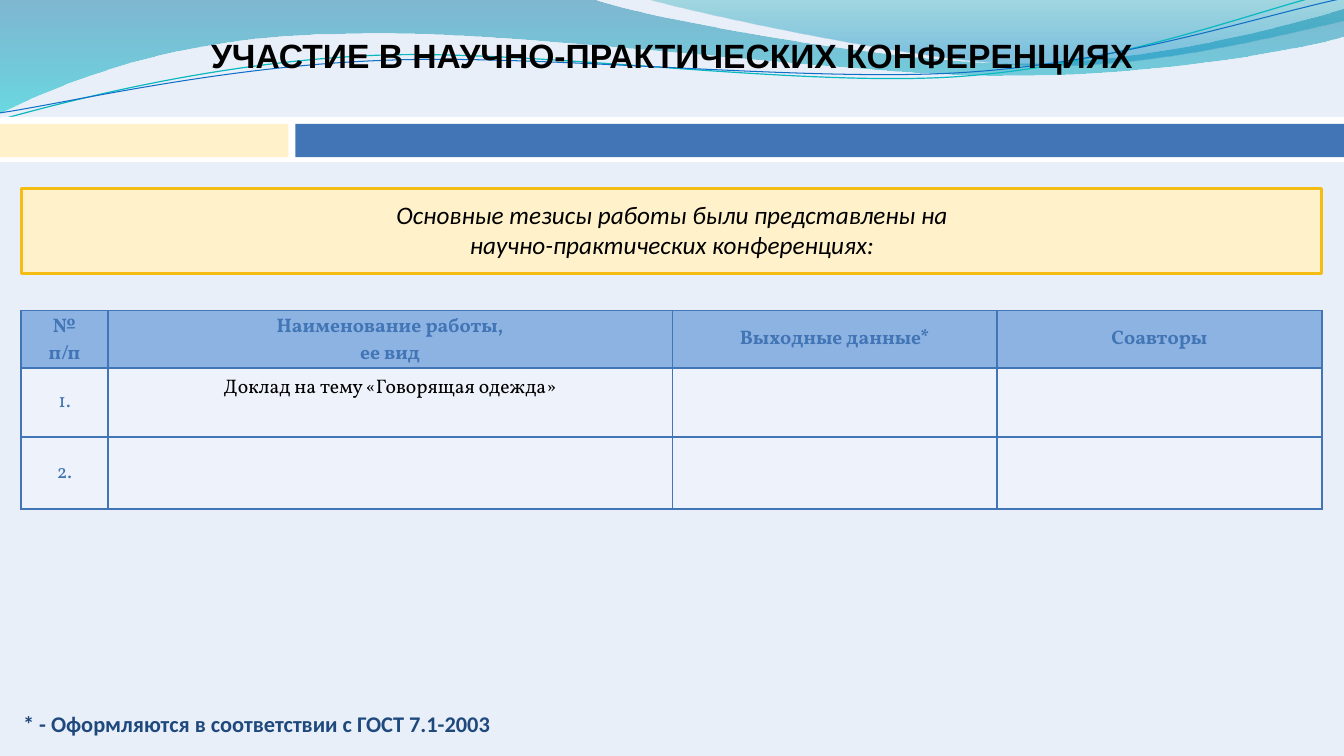
from lxml import etree
from pptx import Presentation
from pptx.dml.color import RGBColor
from pptx.enum.shapes import MSO_SHAPE
from pptx.enum.text import MSO_ANCHOR, PP_ALIGN
from pptx.oxml.ns import qn
from pptx.util import Inches, Pt

RECT = MSO_SHAPE.RECTANGLE
TOP, MIDDLE = MSO_ANCHOR.TOP, MSO_ANCHOR.MIDDLE
LEFT, CENTER = PP_ALIGN.LEFT, PP_ALIGN.CENTER
WIDE, HIGH = 13.33, 7.5
EDGE, INNER = 0.21, 12.9

COLORS = {
    "back": "E8EFF9", "white": "FFFFFF", "black": "000000",
    "blue": "4175B5", "cream": "FFF2CB", "gold": "F5BD14",
    "head": "8DB3E2", "cell": "EEF2FA", "navy": "1F497D",
    "sea": "0074A1", "aqua": "00C6CF", "teal": "00A1A9",
    "sky": "008BBF", "mint": "0AB8BF", "azure": "0F6FC6",
}

# A pair is a straight step; six numbers are a Bézier step.
WAVES = [
    ([(0, -0.01), (5.87, -0.01),
      (6.34, 0.17, 8.85, 0.63, 10.11, 0.63),
      (11.38, 0.63, 12.78, 0.26, 13.33, 0.09), (13.35, 0.36),
      (13.11, 0.44, 11.6, 0.76, 9.94, 0.75),
      (8.29, 0.75, 5.09, 0.28, 3.43, 0.34),
      (1.72, 0.35, 0.61, 0.83, -0.01, 1.13)],
     [(0, "sea", 45), (1, "aqua", 55)]),
    ([(6.39, -0.01),
      (6.79, 0.11, 9.09, 0.62, 10.25, 0.65),
      (11.41, 0.69, 12.82, 0.32, 13.33, 0.21), (13.33, 0)],
     [(0, "teal", 30), (0.8, "sky", 45)]),
]
LINES = [
    ([(-0.01, 1.19), (0.64, 1.01, 2.11, 0.62, 3.69, 0.55),
      (5.27, 0.48, 7.9, 0.87, 9.5, 0.76),
      (11.1, 0.65, 12.52, 0.08, 13.31, -0.1)], "mint", 0.85),
    ([(0, 1.12), (0.63, 1.03, 2.18, 0.66, 3.78, 0.6),
      (5.37, 0.53, 7.96, 0.82, 9.55, 0.72),
      (11.15, 0.62, 12.55, 0.14, 13.34, -0.02)], "azure", 0.75),
]
COLS = [0.86, 5.6, 3.22, 3.22]
ROWS = [0.57, 0.69, 0.71]
CELLS = [
    ["№\nп/п", "Наименование работы,\nее вид", "Выходные данные*", "Соавторы"],
    ["1.", "Доклад на тему «Говорящая одежда»", "", ""],
    ["2.", "", "", ""],
]


def rgb(name):
    return RGBColor.from_string(COLORS[name])


def outline(slide, steps, close):
    """Join the end points, then bend the Bézier steps."""
    ends = [tuple(map(Inches, step[-2:])) for step in steps]
    pen = slide.shapes.build_freeform(*ends[0])
    pen.add_line_segments(ends[1:], close=close)
    shape = pen.convert_to_shape()
    shape.shadow.inherit = False
    nodes = list(shape.element.iter(qn("a:lnTo")))
    for node, step in zip(nodes, steps[1:]):
        if len(step) == 2:
            continue
        node.tag = qn("a:cubicBezTo")
        for i in (0, 1):
            x, y = map(Inches, step[2 * i:2 * i + 2])
            node.insert(i, etree.Element(
                qn("a:pt"), x=str(x - shape.left), y=str(y - shape.top)))
    return shape


def wave(slide, steps, stops):
    shape = outline(slide, steps, True)
    shape.line.fill.background()
    shape.fill.gradient()
    shape.fill.gradient_angle = 270
    for stop, (place, name, _) in zip(shape.fill.gradient_stops, stops):
        stop.position = place
        stop.color.rgb = rgb(name)
    tints = shape.element.spPr.iter(qn("a:srgbClr"))
    for tint, (_, _, share) in zip(tints, stops):
        etree.SubElement(tint, qn("a:alpha"), val=str(share * 1000))


def strand(slide, steps, name, width):
    shape = outline(slide, steps, False)
    shape.fill.background()
    shape.line.color.rgb = rgb(name)
    shape.line.width = Pt(width)


def bar(slide, box, name, edge=None):
    shape = slide.shapes.add_shape(RECT, *map(Inches, box))
    shape.shadow.inherit = False
    shape.fill.solid()
    shape.fill.fore_color.rgb = rgb(name)
    if edge:
        shape.line.color.rgb = rgb(edge)
        shape.line.width = Pt(2)
    else:
        shape.line.fill.background()


def write(frame, text, face, size, name, align=CENTER, bold=False, slant=False):
    for i, row in enumerate(text.split("\n")):
        para = frame.add_paragraph() if i else frame.paragraphs[0]
        para.text = row
        para.alignment = align
        font = para.font
        font.name, font.size = face, Pt(size)
        font.bold, font.italic = bold, slant
        font.color.rgb = rgb(name)


def label(slide, box, text, *style, wrap=False, **more):
    frame = slide.shapes.add_textbox(*map(Inches, box)).text_frame
    frame.word_wrap = wrap
    write(frame, text, *style, **more)


def border(cell, name, width):
    props = cell._tc.get_or_add_tcPr()
    for i, side in enumerate(("lnL", "lnR", "lnT", "lnB")):
        line = etree.Element(qn("a:" + side), w=str(Pt(width)))
        fill = etree.SubElement(line, qn("a:solidFill"))
        etree.SubElement(fill, qn("a:srgbClr"), val=COLORS[name])
        props.insert(i, line)


def grid(slide, left, top):
    table = slide.shapes.add_table(
        len(ROWS), len(COLS), Inches(left), Inches(top),
        Inches(sum(COLS)), Inches(sum(ROWS))).table
    for col, width in zip(table.columns, COLS):
        col.width = Inches(width)
    for r, (height, texts) in enumerate(zip(ROWS, CELLS)):
        table.rows[r].height = Inches(height)
        head = r == 0
        for c, text in enumerate(texts):
            cell = table.cell(r, c)
            topic = c == 1 and r == 1
            cell.fill.solid()
            cell.fill.fore_color.rgb = rgb("head" if head else "cell")
            cell.vertical_anchor = TOP if topic else MIDDLE
            cell.margin_top = cell.margin_bottom = Inches(0 if head else 0.05)
            if topic:
                cell.margin_top = Inches(0.07)
            elif "\n" in text:
                cell.margin_top = Inches(0.03)
            write(cell.text_frame, text, "Vollkorn", 14,
                  "black" if topic else "blue", bold=head)
            border(cell, "blue", 1.5)


def main():
    deck = Presentation()
    deck.slide_width, deck.slide_height = Inches(WIDE), Inches(HIGH)
    slide = deck.slides.add_slide(deck.slide_layouts[6])
    slide.background.fill.solid()
    slide.background.fill.fore_color.rgb = rgb("back")
    for item in WAVES:
        wave(slide, *item)
    for item in LINES:
        strand(slide, *item)
    label(slide, (1.95, 0.3, 9.43, 0.51),
          "УЧАСТИЕ В НАУЧНО-ПРАКТИЧЕСКИХ КОНФЕРЕНЦИЯХ",
          "Arial", 24, "black", bold=True)
    bar(slide, (0, 1.16, WIDE, 0.45), "white")
    bar(slide, (2.93, 1.23, WIDE - 2.93, 0.33), "blue")
    bar(slide, (0, 1.23, 2.86, 0.33), "cream")
    bar(slide, (EDGE, 1.87, INNER, 0.84), "cream", "gold")
    label(slide, (2 * EDGE, 1.93, WIDE - 4 * EDGE, 0.71),
          "Основные тезисы работы были представлены на\n"
          "научно-практических конференциях:",
          "Calibri", 18, "black", wrap=True, slant=True)
    grid(slide, EDGE, 3.08)
    label(slide, (0.13, 7, 4.95, 0.37),
          "* - Оформляются в соответствии с ГОСТ 7.1-2003",
          "Calibri", 16, "navy", align=LEFT, bold=True)
    deck.save("out.pptx")


if __name__ == "__main__":
    main()
